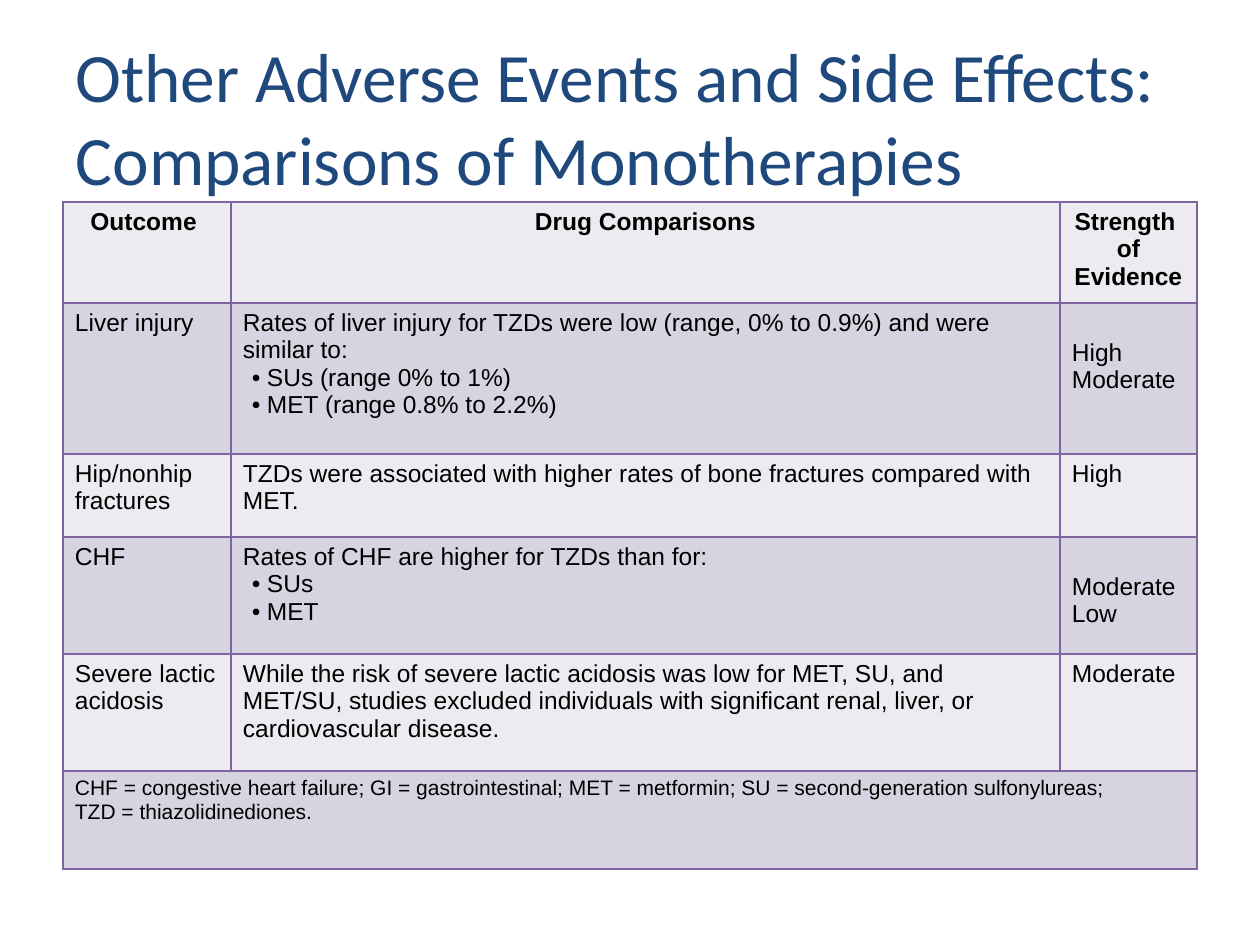
from lxml.etree import SubElement
from pptx import Presentation
from pptx.dml.color import RGBColor
from pptx.enum.text import MSO_ANCHOR as Anchor, PP_ALIGN as Align
from pptx.oxml.ns import qn
from pptx.util import Pt

PX = 7257.142857  # EMU per px, at 126 px to the inch
COLORS = {"title": "1F497D", "text": "000000", "border": "8064A2",
          "light": "EDEAF0", "dark": "D8D3E0"}
COLUMNS = [168, 829, 137]
ROWS = [101, 151, 83, 117, 117, 98]
BULLET = "• "
DROP = 30  # lowers the ratings beside bulleted comparisons

TABLE = [
    ["Outcome ", "Drug Comparisons", "Strength \vof Evidence"],
    ["Liver injury",
     ["Rates of liver injury for TZDs were low (range, 0% to 0.9%) and were similar to:",
      BULLET + "SUs (range 0% to 1%)", BULLET + "MET (range 0.8% to 2.2%)"],
     ["High", "Moderate"]],
    ["Hip/nonhip fractures",
     "TZDs were associated with higher rates of bone fractures compared with MET.",
     "High"],
    ["CHF",
     ["Rates of CHF are higher for TZDs than for:", BULLET + "SUs", BULLET + "MET"],
     ["Moderate", "Low"]],
    ["Severe lactic acidosis",
     "While the risk of severe lactic acidosis was low for MET, SU, and MET/SU, "
     "studies excluded individuals with significant renal, liver, or "
     "cardiovascular disease.",
     "Moderate"],
    ["CHF = congestive heart failure; GI = gastrointestinal; MET = metformin; "
     "SU = second-generation sulfonylureas; \vTZD = thiazolidinediones."],
]


def emu(px):
    return round(px * PX)


def color(name):
    return RGBColor.from_string(COLORS[name])


def add_bullet(para):
    props = para._p.get_or_add_pPr()
    props.set("marL", str(emu(24)))
    props.set("indent", str(emu(-15)))
    SubElement(props, qn("a:buFont"), typeface="Arial")
    SubElement(props, qn("a:buChar"), char=BULLET.strip())


def write(frame, text, size=14, font="Arial", fill="text", bold=False, align=Align.LEFT):
    """Fill a text frame with one paragraph, or one for each item of a list."""
    lines = text if isinstance(text, list) else [text]
    for index, line in enumerate(lines):
        para = frame.add_paragraph() if index else frame.paragraphs[0]
        if line.startswith(BULLET):
            add_bullet(para)
        para.text = line.removeprefix(BULLET)
        para.alignment = align
        for span in para.runs:
            span.font.size = Pt(size)
            span.font.name = font
            span.font.bold = bold
            span.font.color.rgb = color(fill)


def style_cell(cell, fill):
    props = cell._tc.get_or_add_tcPr()
    for side in ("lnL", "lnR", "lnT", "lnB"):
        line = SubElement(props, qn(f"a:{side}"), w=str(Pt(1)))
        paint = SubElement(line, qn("a:solidFill"))
        SubElement(paint, qn("a:srgbClr"), val=COLORS["border"])
    cell.fill.solid()
    cell.fill.fore_color.rgb = color(fill)
    cell.margin_left = cell.margin_right = emu(12)
    cell.margin_top = cell.margin_bottom = emu(6)


def place_title(page, left, top, width, height):
    title = page.shapes.title
    title.left, title.top, title.width, title.height = map(emu, (left, top, width, height))
    frame = title.text_frame
    frame.word_wrap = True
    frame.vertical_anchor = Anchor.MIDDLE
    write(frame, "Other Adverse Events and Side Effects: \vComparisons of Monotherapies",
          size=39.6, font="Calibri", fill="title")


def place_table(page, left, top):
    box = map(emu, (left, top, sum(COLUMNS), sum(ROWS)))
    table = page.shapes.add_table(len(ROWS), len(COLUMNS), *box).table
    for column, width in zip(table.columns, COLUMNS):
        column.width = emu(width)
    for row, height in zip(table.rows, ROWS):
        row.height = emu(height)

    # Banded fills and borders
    for index, row in enumerate(table.rows):
        for cell in row.cells:
            style_cell(cell, "dark" if index % 2 else "light")

    # Header, findings and the abbreviations across the last row
    last = len(ROWS) - 1
    table.cell(last, 0).merge(table.cell(last, len(COLUMNS) - 1))
    for r, texts in enumerate(TABLE):
        for c, text in enumerate(texts):
            cell = table.cell(r, c)
            write(cell.text_frame, text, size=12 if r == last else 14, bold=r == 0,
                  align=Align.CENTER if r == 0 else Align.LEFT)
            if c == 2 and isinstance(text, list):
                cell.margin_top = emu(6 + DROP)


def main():
    deck = Presentation()
    deck.slide_width, deck.slide_height = emu(1260), emu(945)
    page = deck.slides.add_slide(deck.slide_layouts[5])
    place_title(page, 63, 38, 1134, 157)
    place_table(page, 63, 202)
    deck.save("out.pptx")


if __name__ == "__main__":
    main()
